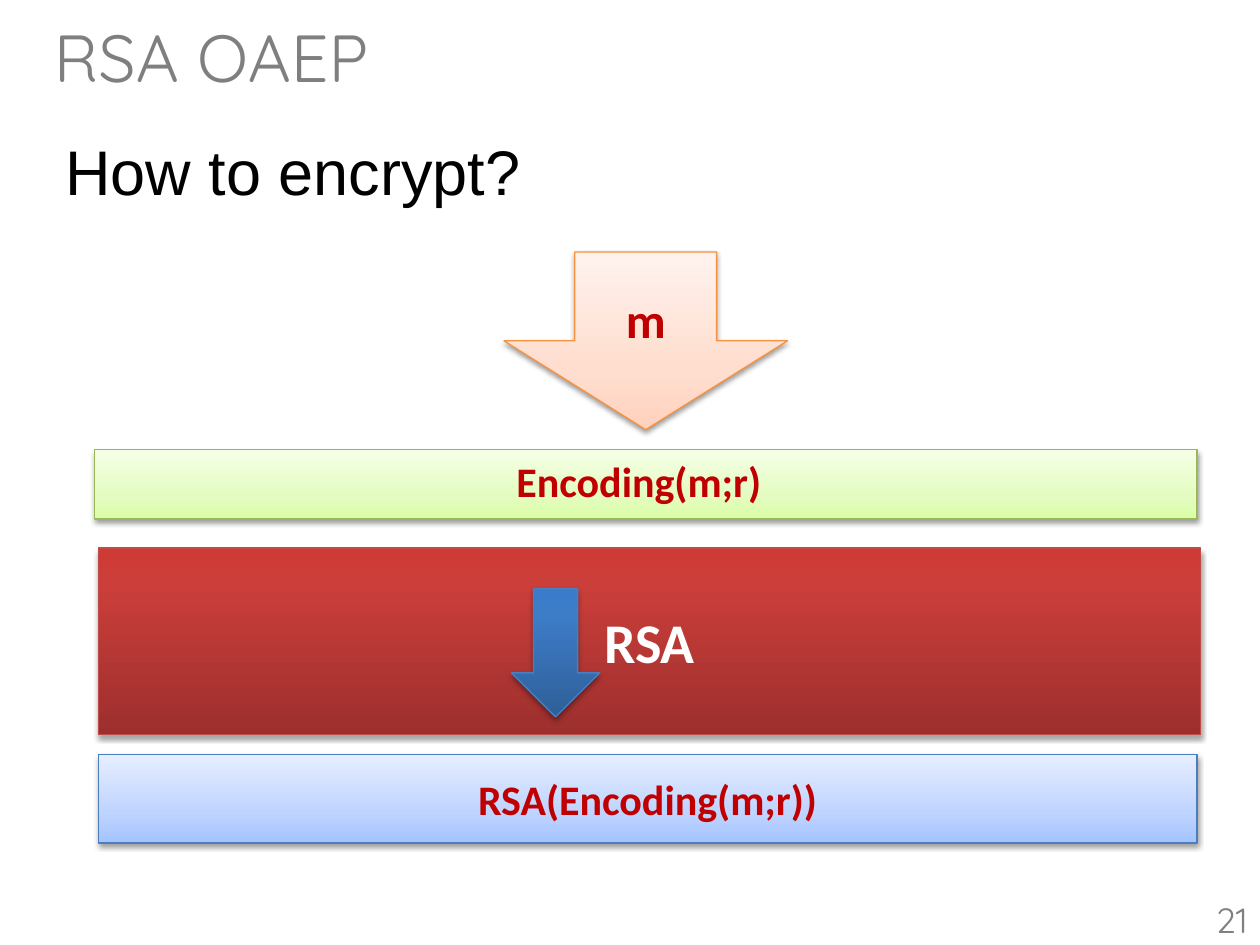
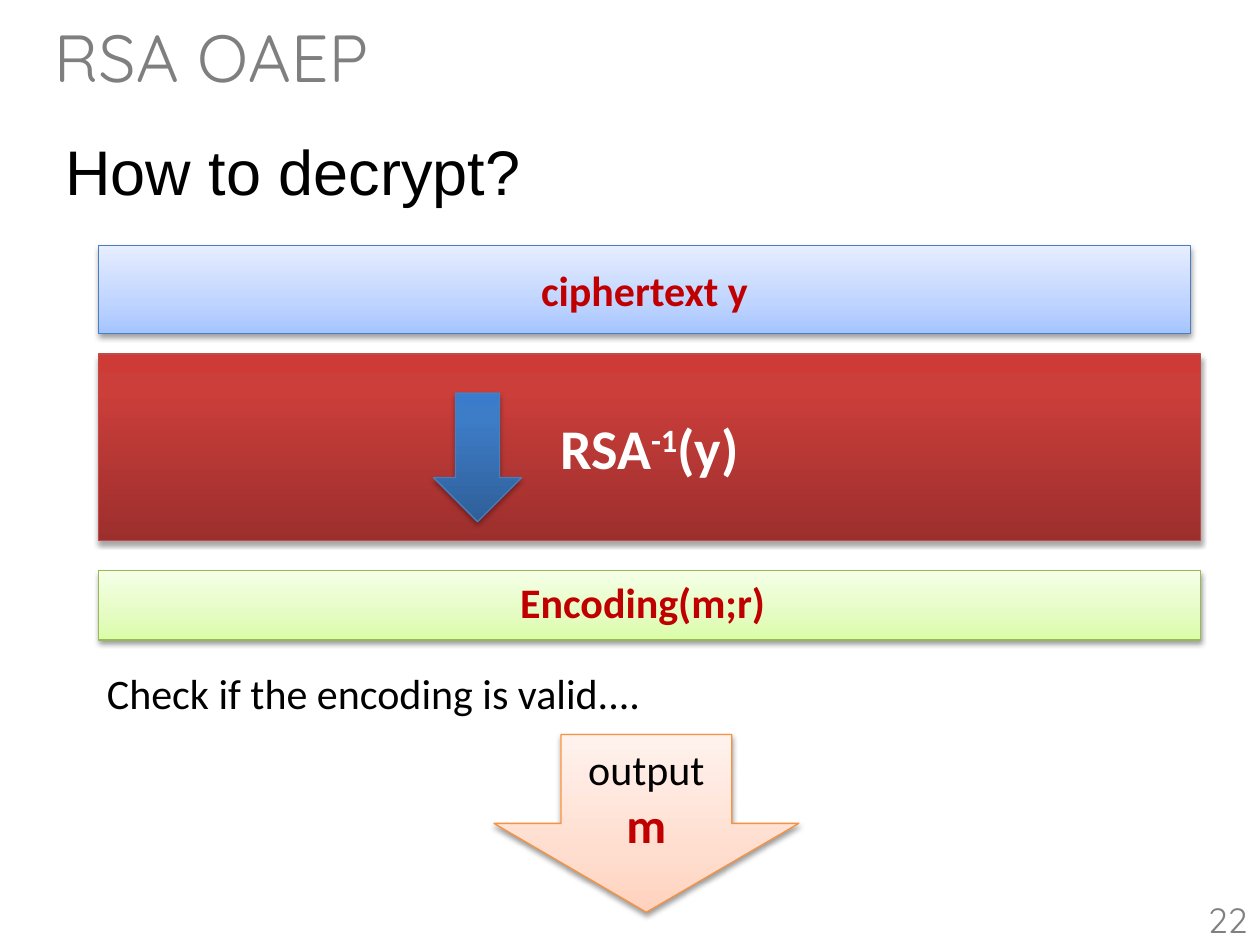
import dataclasses
import pptx
import pptx.dml.color
import pptx.enum.shapes
import pptx.enum.text
import pptx.oxml
import pptx.oxml.ns
import pptx.util

PX = 9144  # EMU in one px: 100 px to the inch
SHAPE = pptx.enum.shapes.MSO_SHAPE
ALIGN = pptx.enum.text.PP_ALIGN
ANCHOR = pptx.enum.text.MSO_ANCHOR
FIT = pptx.enum.text.MSO_AUTO_SIZE


@dataclasses.dataclass(frozen=True)
class Type:
    font: str
    size: int
    color: str
    bold: bool = False


@dataclasses.dataclass(frozen=True)
class Look:
    """Gradient stops run from bottom to top; shade is (alpha %, distance)."""
    stops: tuple
    line: str
    shade: tuple


SOFT = (38, 20000)
DEEP = (35, 23000)


@dataclasses.dataclass(frozen=True)
class Theme:
    title: Type = Type("Quicksand", 38, "7F7F7F")
    number: Type = Type("Quicksand", 20, "808080")
    head: Type = Type("Arial", 36, "000000")
    note: Type = Type("Calibri", 24, "000000")
    label: Type = Type("Calibri", 24, "C00000", True)
    sign: Type = Type("Calibri", 28, "C00000", True)
    core: Type = Type("Calibri", 32, "FFFFFF", True)
    peach: Look = Look(((0, "FFD2BD"), (35, "FFDED0"), (100, "FFF2ED")), "F69240", SOFT)
    green: Look = Look(((0, "DAFDA7"), (35, "E4FCC2"), (100, "F5FFE7")), "98B955", SOFT)
    pale: Look = Look(((0, "A4C4FF"), (35, "BFD4FF"), (100, "E6EEFF")), "4B7EBC", SOFT)
    red: Look = Look(((0, "9C2F2D"), (80, "CB3E3A"), (100, "CE3B37")), "BF4C48", DEEP)
    blue: Look = Look(((0, "2F5F99"), (80, "3D7CC7"), (100, "3A7CCB")), "4B7EBC", DEEP)


THEME = Theme()


def scale(box):
    return [n * PX for n in box]


def rgb(code):
    return pptx.dml.color.RGBColor.from_string(code)


def node(text):
    """Make an XML element in the drawing namespace."""
    tag, rest = text.split(" ", 1)
    return pptx.oxml.parse_xml(f"<a:{tag} {pptx.oxml.ns.nsdecls('a')} {rest}")


def write(frame, lines, align):
    """Fill a frame with (parts, type) lines; every second part is raised."""
    for i, (parts, kind) in enumerate(lines):
        para = frame.add_paragraph() if i else frame.paragraphs[0]
        para.alignment = align
        font = para.font
        font.name, font.size = kind.font, pptx.util.Pt(kind.size)
        font.bold, font.color.rgb = kind.bold, rgb(kind.color)
        for j, part in enumerate(parts):
            run = para.add_run()
            run.text = part
            if j % 2:
                run._r.get_or_add_rPr().set("baseline", "30000")


def add_text(shapes, box, text, kind, align=ALIGN.LEFT, wrap=True, grow=True):
    frame = shapes.add_textbox(*scale(box)).text_frame
    frame.word_wrap = wrap
    frame.auto_size = FIT.SHAPE_TO_FIT_TEXT if grow else FIT.NONE
    frame.vertical_anchor = ANCHOR.TOP if grow else ANCHOR.MIDDLE
    write(frame, [((text,), kind)], align)


def paint(shape, look):
    """Apply gradient, outline and soft shadow."""
    shape.fill.gradient()
    shape.fill.gradient_angle = 90
    props = shape._element.spPr
    stops = props.find(".//" + pptx.oxml.ns.qn("a:gsLst"))
    for old in list(stops):
        stops.remove(old)
    for pos, color in look.stops:
        stops.append(node(f'gs pos="{pos * 1000}"><a:srgbClr val="{color}"/></a:gs>'))
    shape.line.color.rgb = rgb(look.line)
    shape.line.width = pptx.util.Pt(0.75)
    shape.shadow.inherit = False
    alpha, dist = look.shade
    props.find(pptx.oxml.ns.qn("a:effectLst")).append(node(
        f'outerShdw blurRad="40000" dist="{dist}" dir="5400000" rotWithShape="0">'
        f'<a:srgbClr val="000000"><a:alpha val="{alpha * 1000}"/></a:srgbClr>'
        '</a:outerShdw>'))


def add_block(shapes, form, box, look, lines=()):
    shape = shapes.add_shape(form, *scale(box))
    paint(shape, look)
    shape.text_frame.vertical_anchor = ANCHOR.MIDDLE
    write(shape.text_frame, lines, ALIGN.CENTER)
    return shape


def add_bar(shapes, box, text):
    add_block(shapes, SHAPE.RECTANGLE, box, THEME.pale, [((text,), THEME.label)])


def add_core(shapes, top, parts):
    add_block(shapes, SHAPE.RECTANGLE, (78, top, 875, 148), THEME.red,
              [(parts, THEME.core)])


def add_step(shapes, left, top):
    add_block(shapes, SHAPE.DOWN_ARROW, (left, top, 70, 102), THEME.blue)


def add_code(shapes, left, top):
    """Add the green bar grouped with its label."""
    group = shapes.add_group_shape().shapes
    add_block(group, SHAPE.RECTANGLE, (left, top, 875, 55), THEME.green)
    add_text(group, (left + 325, top, 217, 50), "Encoding(m;r)", THEME.label, wrap=False)


def add_page(deck, number, head):
    shapes = deck.slides.add_slide(deck.slide_layouts[6]).shapes
    add_text(shapes, (767, 710, 233, 40), str(number), THEME.number,
             ALIGN.RIGHT, grow=False)
    add_text(shapes, (33, 8, 933, 74), "RSA OAEP", THEME.title)
    add_text(shapes, (42, 100, 875, 71), head, THEME.head)
    return shapes


def encrypt(deck):
    shapes = add_page(deck, 21, "How to encrypt?")
    add_block(shapes, SHAPE.DOWN_ARROW, (400, 200, 225, 141), THEME.peach,
              [(("m",), THEME.sign)])
    add_core(shapes, 435, ("RSA",))
    add_code(shapes, 75, 357)
    add_bar(shapes, (78, 599, 872, 70), "RSA(Encoding(m;r))")
    add_step(shapes, 406, 467)


def decrypt(deck):
    shapes = add_page(deck, 22, "How to decrypt?")
    add_core(shapes, 281, ("RSA", "-1", "(y)"))
    add_bar(shapes, (78, 195, 867, 70), "ciphertext y")
    add_step(shapes, 344, 312)
    add_text(shapes, (75, 525, 725, 50), "Check if the encoding is valid....", THEME.note)
    arrow = add_block(shapes, SHAPE.DOWN_ARROW, (392, 583, 242, 141), THEME.peach,
                      [(("output",), THEME.note), (("m",), THEME.sign)])
    arrow.adjustments[0] = 0.56
    add_code(shapes, 78, 453)


def main():
    deck = pptx.Presentation()
    deck.slide_width, deck.slide_height = scale((1000, 750))
    encrypt(deck)
    decrypt(deck)
    deck.save("out.pptx")


if __name__ == "__main__":
    main()
